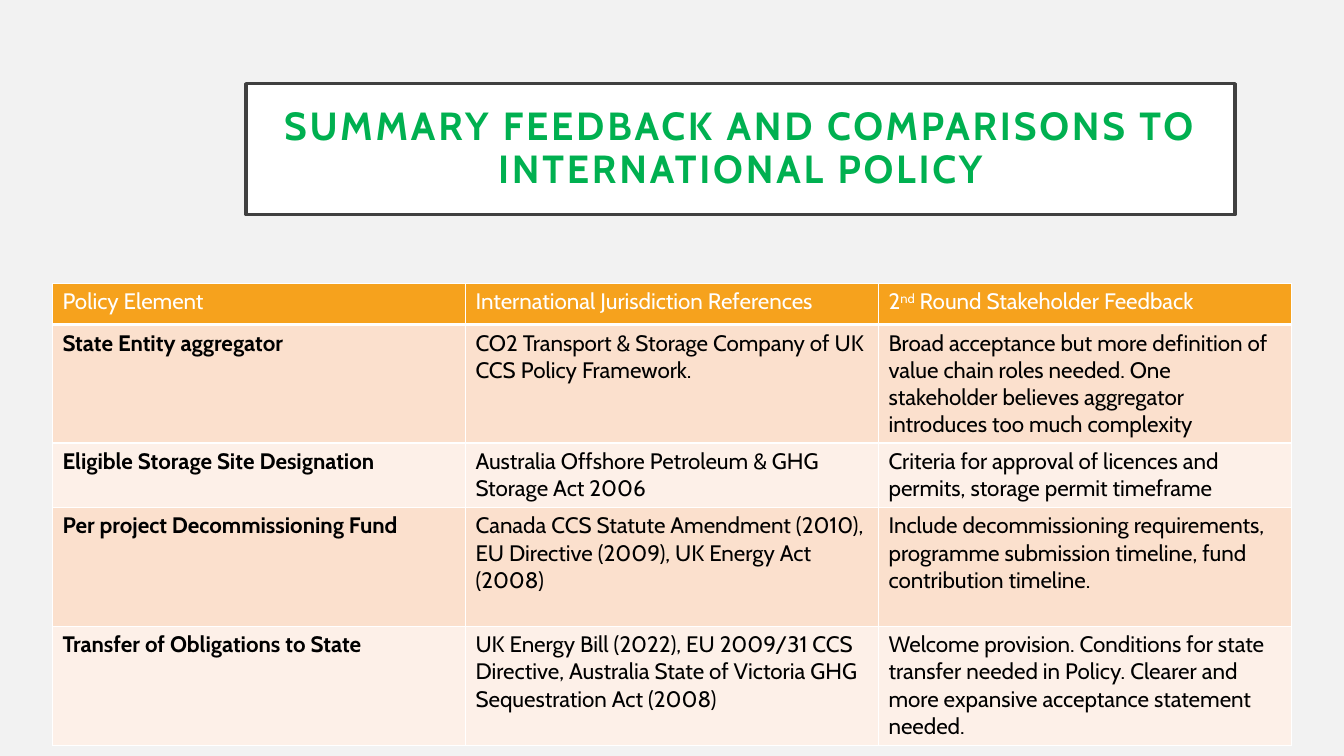
from lxml import etree
from pptx import Presentation
from pptx.dml.color import RGBColor
from pptx.enum.text import MSO_ANCHOR, PP_ALIGN
from pptx.oxml.ns import qn
from pptx.util import Inches, Pt

MIDDLE = MSO_ANCHOR.MIDDLE
CENTER = PP_ALIGN.CENTER
WHITE = RGBColor(0xFF, 0xFF, 0xFF)
BLACK = RGBColor(0x00, 0x00, 0x00)
BACKGROUND = RGBColor(0xF2, 0xF2, 0xF2)
FRAME = RGBColor(0x40, 0x40, 0x40)
GREEN = RGBColor(0x00, 0xB0, 0x50)
ORANGE = RGBColor(0xF6, 0xA2, 0x1D)
BANDS = [RGBColor(0xFD, 0xF0, 0xE8), RGBColor(0xFB, 0xE0, 0xCD)]
FONT = "Cabin"

ROWS = [
    ("Policy Element", "International Jurisdiction References", "2^nd^ Round Stakeholder Feedback"),
    ("State Entity aggregator",
     "CO2 Transport & Storage Company of UK CCS Policy Framework.",
     "Broad acceptance but more definition of value chain roles needed. One stakeholder "
     "believes aggregator introduces too much complexity"),
    ("Eligible Storage Site Designation",
     "Australia Offshore Petroleum & GHG Storage Act 2006",
     "Criteria for approval of licences and permits, storage permit timeframe"),
    ("Per project Decommissioning Fund",
     "Canada CCS Statute Amendment (2010), EU Directive (2009), UK Energy Act (2008)",
     "Include decommissioning requirements, programme submission timeline, "
     "fund contribution timeline."),
    ("Transfer of Obligations to State",
     "UK Energy Bill (2022), EU 2009/31 CCS Directive, Australia State of Victoria GHG "
     "Sequestration Act (2008)",
     "Welcome provision. Conditions for state transfer needed in Policy. Clearer and more "
     "expansive acceptance statement needed."),
]
ROW_HEIGHTS = [0.41, 1.17, 0.64, 1.18, 1.18]


def add_run(paragraph, text, size, color, bold):
    run = paragraph.add_run()
    run.text = text
    for name, value in {"name": FONT, "size": Pt(size), "bold": bold}.items():
        setattr(run.font, name, value)
    run.font.color.rgb = color
    return run


def add_border(cell, side, width):
    line = etree.SubElement(cell._tc.get_or_add_tcPr(), qn(f"a:ln{side}"), w=str(Pt(width)))
    fill = etree.SubElement(line, qn("a:solidFill"))
    etree.SubElement(fill, qn("a:srgbClr"), val=str(WHITE))


presentation = Presentation()
presentation.slide_width = Inches(13.33)
presentation.slide_height = Inches(7.5)
slide = presentation.slides.add_slide(presentation.slide_layouts[5])
slide.background.fill.solid()
slide.background.fill.fore_color.rgb = BACKGROUND

title = slide.shapes.title
title_box = {"left": 2.44, "top": 0.83, "width": 9.81, "height": 1.3}
for name, value in title_box.items():
    setattr(title, name, Inches(value))
title.fill.solid()
title.fill.fore_color.rgb = WHITE
title.line.color.rgb = FRAME
title.line.width = Pt(2.5)
frame = title.text_frame
frame.word_wrap = True
frame.vertical_anchor = MIDDLE
for side in ("left", "top", "right", "bottom"):
    setattr(frame, f"margin_{side}", Inches(0.2))
paragraph = frame.paragraphs[0]
paragraph.alignment = CENTER
paragraph.line_spacing = 0.9
title_run = add_run(paragraph, "SUMMARY FEEDBACK AND COMPARISONS TO INTERNATIONAL POLICY", 28, GREEN, True)
title_run._r.get_or_add_rPr().set("spc", "200")

table = slide.shapes.add_table(
    len(ROWS), 3, Inches(0.52), Inches(2.81), Inches(12.29), Inches(sum(ROW_HEIGHTS))
).table
table.horz_banding = False
for row_index, (texts, height) in enumerate(zip(ROWS, ROW_HEIGHTS)):
    table.rows[row_index].height = Inches(height)
    header = row_index == 0
    for column_index, text in enumerate(texts):
        cell = table.cell(row_index, column_index)
        for side in "LRTB":
            add_border(cell, side, 3 if header and side == "B" else 1)
        cell.fill.solid()
        cell.fill.fore_color.rgb = ORANGE if header else BANDS[row_index % 2]
        paragraph = cell.text_frame.paragraphs[0]
        bold = column_index == 0 and not header
        for piece_index, piece in enumerate(text.split("^")):
            run = add_run(paragraph, piece, 16, WHITE if header else BLACK, bold)
            if piece_index % 2:
                run._r.get_or_add_rPr().set("baseline", "30000")

presentation.save("out.pptx")
